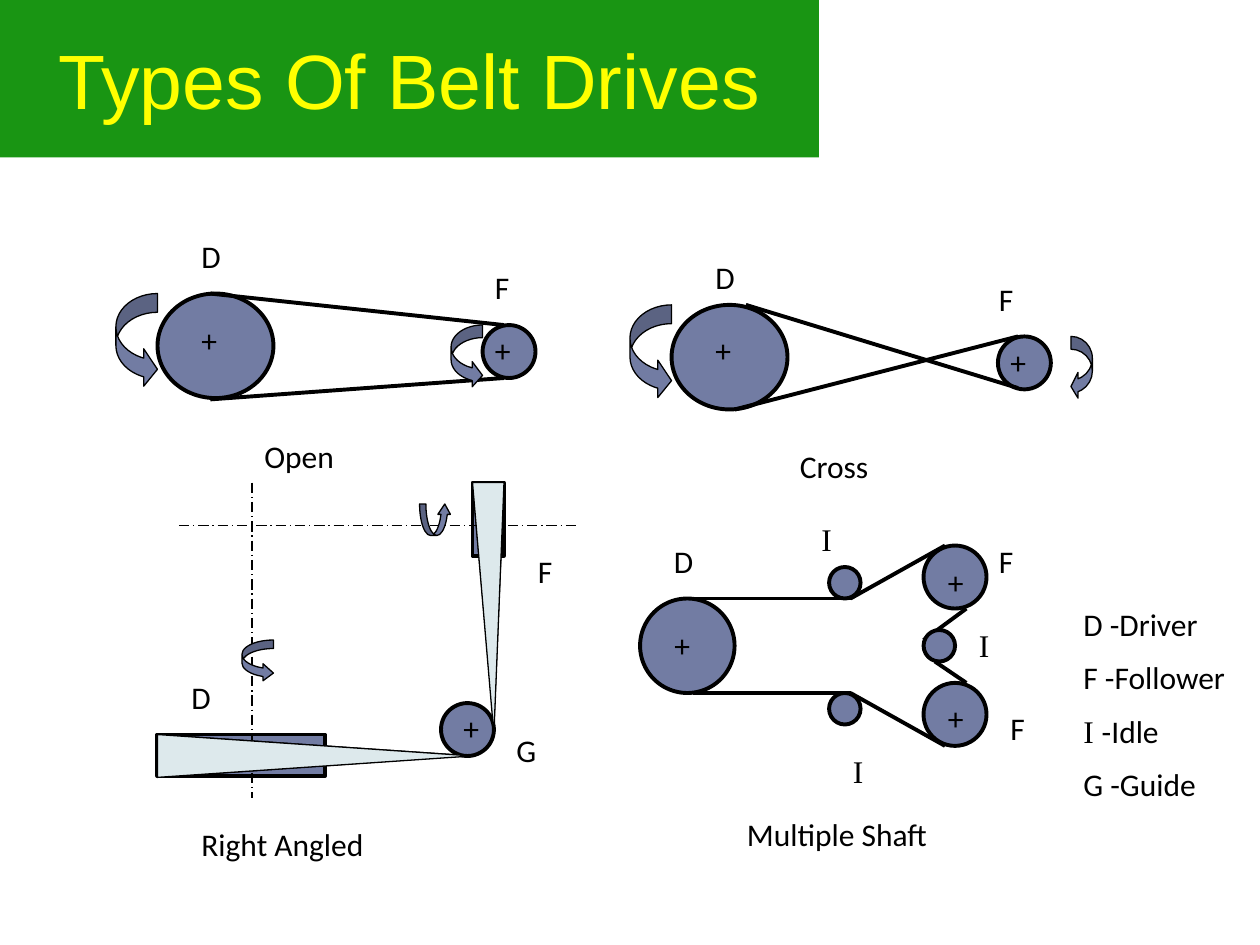
from pptx import Presentation
from pptx import util as u
from pptx.dml.color import RGBColor
from pptx.enum import dml, shapes as sh, text as tx
from pptx.oxml import ns
from lxml import etree

theme = {
    "green": RGBColor.from_string("199513"),
    "yellow": RGBColor.from_string("FFFF00"),
    "steel": RGBColor.from_string("727CA3"),
    "pale": RGBColor.from_string("DDE9EC"),
    "black": RGBColor.from_string("000000"),
    "head": {"name": "Arial", "size": u.Pt(44)},
    "body": {"name": "Calibri", "size": u.Pt(18)},
    "serif": {"name": "Times New Roman", "size": u.Pt(18)},
    "thick": u.Pt(2.25),
    "thin": u.Pt(0.75),
}
form = sh.MSO_SHAPE

deck = Presentation()
deck.slide_width, deck.slide_height = u.Inches(10), u.Inches(7.5)
slide = deck.slides.add_slide(deck.slide_layouts[5])

# Title band
title = slide.shapes.title
for key, val in {"left": 0, "top": 0, "width": 6.5, "height": 1.25}.items():
    setattr(title, key, u.Inches(val))
title.fill.solid()
title.fill.fore_color.rgb = theme["green"]
title.text_frame.text = "Types Of Belt Drives"
title.text_frame.vertical_anchor = tx.MSO_ANCHOR.MIDDLE
line = title.text_frame.paragraphs[0]
line.alignment = tx.PP_ALIGN.CENTER
for key, val in theme["head"].items():
    setattr(line.font, key, val)
line.font.color.rgb = theme["yellow"]

# The cross and multiple shaft drives are groups
main = slide.shapes
cross = main.add_group_shape().shapes
multi = main.add_group_shape().shapes


def paint(part, fill, width):
    part.shadow.inherit = False
    part.fill.solid()
    part.fill.fore_color.rgb = theme[fill]
    part.line.color.rgb = theme["black"]
    part.line.width = theme[width]


def label(home, words, left, top, width=0.42, height=0.4, align=None):
    """Add a text box; each paragraph is a list of (words, font) runs."""
    box = home.add_textbox(*map(u.Inches, (left, top, width, height)))
    frame = box.text_frame
    frame.word_wrap = True
    for num, runs in enumerate(words):
        para = frame.add_paragraph() if num else frame.paragraphs[0]
        para.alignment = align
        para.space_before = u.Pt(9 if num else 0)
        for piece, face in runs:
            run = para.add_run()
            run.text = piece
            for key, val in theme[face].items():
                setattr(run.font, key, val)
            run.font.color.rgb = theme["black"]


# Pulleys seen from the front, then those seen from the side
for home, kind, *box in [
    (main, form.OVAL, 1.25, 2.33, 0.92, 0.83),
    (main, form.OVAL, 3.83, 2.58, 0.42, 0.42),
    (cross, form.OVAL, 5.33, 2.42, 0.92, 0.83),
    (cross, form.OVAL, 7.92, 2.67, 0.42, 0.42),
    (multi, form.OVAL, 5.08, 4.75, 0.75, 0.75),
    (multi, form.OVAL, 7.33, 4.33, 0.5, 0.5),
    (multi, form.OVAL, 7.33, 5.42, 0.5, 0.5),
    (main, form.OVAL, 3.5, 5.58, 0.42, 0.42),
    (main, form.RECTANGLE, 1.25, 5.83, 1.33, 0.33),
    (main, form.RECTANGLE, 3.75, 3.83, 0.25, 0.58),
]:
    paint(home.add_shape(kind, *map(u.Inches, box)), "steel", "thick")

# Belts and shaft axes
solid, dash = dml.MSO_LINE.SOLID, dml.MSO_LINE.LONG_DASH_DOT
for home, width, style, ends in [
    (main, "thick", solid, [(1.67, 2.33, 4, 2.58), (1.67, 3.17, 4, 3)]),
    (cross, "thick", solid,
     [(5.92, 2.42, 8.08, 3.08), (5.83, 3.25, 8.08, 2.67)]),
    (multi, "thick", solid,
     [(5.5, 4.75, 6.75, 4.75), (5.5, 5.5, 6.75, 5.5),
      (7.67, 5.42, 7.42, 5.25), (7.5, 5.92, 6.75, 5.5),
      (7.5, 4.33, 6.75, 4.75), (7.67, 4.83, 7.33, 5.08)]),
    (main, "thin", dash, [(1.42, 4.17, 4.58, 4.17), (2, 3.83, 2, 6.33)]),
    (main, "thin", solid,
     [(1.25, 5.83, 3.75, 6), (1.25, 6.17, 3.67, 6),
      (3.75, 3.83, 3.92, 5.75), (4, 3.83, 3.92, 5.75)]),
]:
    for pair in ends:
        belt = home.add_connector(sh.MSO_CONNECTOR.STRAIGHT,
                                  *map(u.Inches, pair))
        belt.line.color.rgb = theme["black"]
        belt.line.width = theme[width]
        belt.line.dash_style = style
        etree.SubElement(belt._element.spPr, ns.qn("a:effectLst"))

# Twisted belt faces of the right angled drive
for first, *rest in [
    [(1.25, 5.83), (1.25, 6.17), (3.75, 6)],
    [(3.75, 3.83), (3.92, 5.83), (4, 3.83)],
]:
    pen = main.build_freeform(*map(u.Inches, first), scale=1.0)
    pen.add_line_segments([tuple(map(u.Inches, spot)) for spot in rest])
    paint(pen.convert_to_shape(), "pale", "thin")

# Idle pulleys
for left, top in [(6.58, 4.5), (6.58, 5.5), (7.33, 5)]:
    idle = multi.add_shape(form.OVAL, *map(u.Inches, (left, top, 0.25, 0.25)))
    paint(idle, "steel", "thick")

# Rotation arrows: the second adjustment is twice the first
for home, kind, bend, *box in [
    (main, form.CURVED_RIGHT_ARROW, 0.4, 3.58, 2.58, 0.25, 0.5),
    (main, form.CURVED_RIGHT_ARROW, 0.45, 0.92, 2.33, 0.33, 0.75),
    (cross, form.CURVED_RIGHT_ARROW, 0.45, 5, 2.42, 0.33, 0.75),
    (cross, form.CURVED_LEFT_ARROW, 0.6, 8.5, 2.67, 0.17, 0.5),
    (main, form.CURVED_RIGHT_ARROW, 0.27, 1.92, 5.08, 0.25, 0.33),
    (main, form.CURVED_UP_ARROW, 0.2, 3.33, 4, 0.25, 0.25),
]:
    turn = home.add_shape(kind, *map(u.Inches, box))
    for num, val in enumerate((bend, 2 * bend, 0.33)):
        turn.adjustments[num] = val
    paint(turn, "steel", "thin")

# Shaft centres
mid = tx.PP_ALIGN.CENTER
for home, left, top, width, align in [
    (main, 1.5, 2.5, 0.33, None), (main, 3.83, 2.58, 0.33, None),
    (cross, 5.58, 2.58, 0.33, None), (cross, 7.92, 2.67, 0.33, None),
    (main, 3.58, 5.58, 0.25, None), (main, 5.25, 4.92, 0.33, mid),
    (main, 7.42, 5.5, 0.33, mid), (main, 7.42, 4.42, 0.33, mid),
]:
    label(home, [[("+", "body")]], left, top, width, align=align)

# Pulley letters
for home, mark, spots in [
    (main, "D", [(1.5, 1.83), (5.58, 2), (1.42, 5.33)]),
    (main, "F", [(3.83, 2.08), (7.83, 2.17), (4.17, 4.33),
                 (7.92, 5.58), (7.83, 4.25)]),
    (main, "G", [(4, 5.75)]),
    (main, "I", [(6.67, 5.92)]),
    (multi, "D", [(5.25, 4.25)]),
    (multi, "I", [(7.67, 4.92), (6.42, 4.08)]),
]:
    for spot in spots:
        label(home, [[(mark, "serif" if mark == "I" else "body")]], *spot)

# Drive names
for name, *box in [
    ("Open", 2, 3.42, 1), ("Cross", 6.25, 3.5, 1.17),
    ("Right Angled", 1.5, 6.5, 2.08), ("Multiple Shaft", 5.83, 6.42, 3.17),
]:
    label(main, [[(name, "body")]], *box)

# Key to the letters
label(main, [
    [("D -Driver", "body")],
    [("F -Follower", "body")],
    [("I ", "serif"), ("-Idle", "body")],
    [("G -Guide", "body")],
], 8.5, 4.75, 1.5, 1.76)

deck.save("out.pptx")
